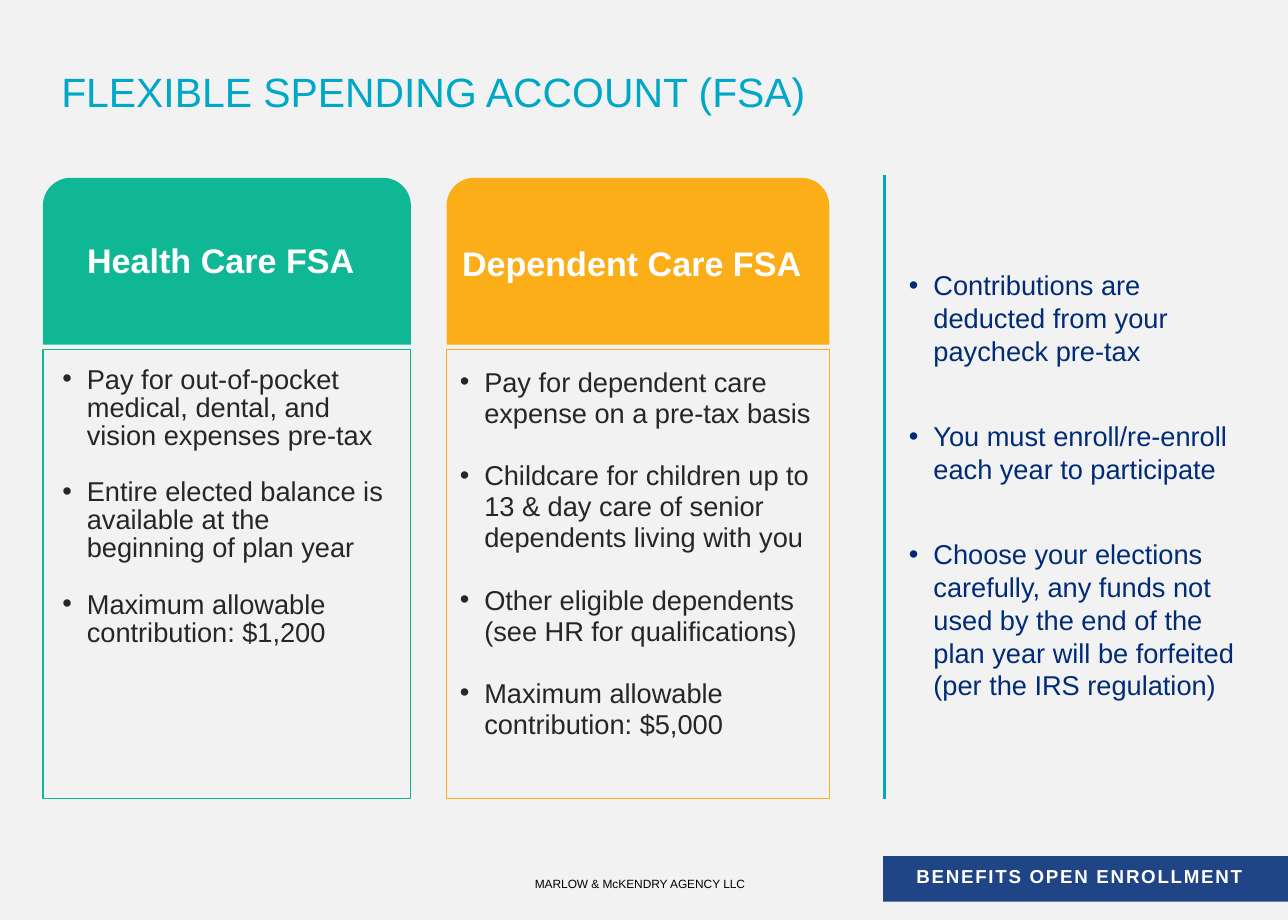
from lxml.etree import SubElement
from pptx import Presentation
from pptx.dml.color import RGBColor
from pptx.enum.shapes import MSO_CONNECTOR as CONNECTOR, MSO_SHAPE as SHAPE
from pptx.enum.text import MSO_ANCHOR as ANCHOR, PP_ALIGN as ALIGN
from pptx.oxml.ns import qn
from pptx.util import Inches, Pt

GREY = RGBColor(0xF2, 0xF2, 0xF2)
BLACK = RGBColor(0x00, 0x00, 0x00)
CHARCOAL = RGBColor(0x26, 0x26, 0x26)
WHITE = RGBColor(0xFF, 0xFF, 0xFF)
NAVY = RGBColor(0x00, 0x2C, 0x77)
CYAN = RGBColor(0x00, 0xA8, 0xC8)
GREEN = RGBColor(0x0F, 0xB7, 0x95)
ORANGE = RGBColor(0xFB, 0xAE, 0x17)

CARD_TOP, HEAD_HEIGHT = 1.45, 1.36
FRAME_TOP, FRAME_HEIGHT = 2.85, 3.66
LIST_TOP = 2.94
BULLET_INDENT = 0.2
LABEL_INSETS = (0, 0, 0.1, 0.05)


class SlideBuilder:
    """Holds the text style and the current slide."""

    font = "Arial"

    def __init__(self, slide):
        self.slide = slide
        slide.background.fill.solid()
        slide.background.fill.fore_color.rgb = GREY

    def set_text(self, shape, lines, size, color, insets, bold=False, wrap=True,
                 anchor=ANCHOR.TOP, align=ALIGN.LEFT, spacing=None, gap=0):
        frame = shape.text_frame
        sides = ("margin_left", "margin_top", "margin_right", "margin_bottom")
        layout = dict(zip(sides, map(Inches, insets)))
        layout.update(word_wrap=wrap, vertical_anchor=anchor)
        for name, value in layout.items():
            setattr(frame, name, value)
        for index, line in enumerate(lines):
            paragraph = frame.paragraphs[0] if index == 0 else frame.add_paragraph()
            paragraph.text = line
            paragraph.alignment = align
            paragraph.space_before = Pt(gap if index else 0)
            if spacing:
                paragraph.line_spacing = Pt(spacing)
            font = paragraph.runs[0].font
            for name, value in dict(name=self.font, size=Pt(size), bold=bold).items():
                setattr(font, name, value)
            font.color.rgb = color
        return frame

    def text(self, box, line, size, color, insets, **style):
        shape = self.slide.shapes.add_textbox(*map(Inches, box))
        self.set_text(shape, [line], size, color, insets, **style)

    def bullets(self, box, items, color, insets, spacing, gap):
        shape = self.slide.shapes.add_textbox(*map(Inches, box))
        frame = self.set_text(shape, items, 16, color, insets, spacing=spacing, gap=gap)
        indent = Inches(BULLET_INDENT)
        for paragraph in frame.paragraphs:
            props = paragraph._p.get_or_add_pPr()
            props.set("marL", str(indent))
            props.set("indent", str(-indent))
            SubElement(props, qn("a:buFont")).set("typeface", self.font)
            SubElement(props, qn("a:buChar")).set("char", "•")

    def shape(self, kind, box, fill=None, line=None):
        shape = self.slide.shapes.add_shape(kind, *map(Inches, box))
        shape.shadow.inherit = False
        if fill is None:
            shape.fill.background()
        else:
            shape.fill.solid()
            shape.fill.fore_color.rgb = fill
        if line is None:
            shape.line.fill.background()
        else:
            shape.line.color.rgb = line
            shape.line.width = Pt(0.75)
        return shape

    def label(self, kind, box, line, size, fill, insets=LABEL_INSETS, **style):
        shape = self.shape(kind, box, fill=fill)
        self.set_text(shape, [line], size, WHITE, insets, bold=True,
                      anchor=ANCHOR.MIDDLE, align=ALIGN.CENTER, **style)
        return shape

    def divider(self, x, top, bottom, color):
        rule = self.slide.shapes.add_connector(
            CONNECTOR.STRAIGHT, *map(Inches, (x, top, x, bottom)))
        rule.line.color.rgb = color
        rule.line.width = Pt(1.5)
        SubElement(rule._element.spPr, qn("a:effectLst"))

    def card(self, left, width, color, heading, head_inset, items, list_box, spacing):
        self.label(SHAPE.ROUND_2_SAME_RECTANGLE, (left, CARD_TOP, width, HEAD_HEIGHT),
                   heading, 20, color, insets=(0, head_inset, 0.1, 0.05), spacing=20.6)
        self.shape(SHAPE.RECTANGLE, (left, FRAME_TOP, width, FRAME_HEIGHT), line=color)
        list_left, list_width, list_height = list_box
        self.bullets((list_left, LIST_TOP, list_width, list_height), items, CHARCOAL,
                     (0.1, 0.05, 0.1, 0.05), spacing, gap=spacing)


def main():
    deck = Presentation()
    deck.slide_width, deck.slide_height = Inches(10.5), Inches(7.5)
    page = SlideBuilder(deck.slides.add_slide(deck.slide_layouts[6]))

    # Footer and badge
    page.text((4.36, 7.15, 1.78, 0.11), "MARLOW & McKENDRY AGENCY LLC", 7, BLACK,
              (0, 0, 0, 0), wrap=False, anchor=ANCHOR.BOTTOM)
    badge = page.label(SHAPE.RECTANGLE, (7.2, 6.98, 3.3, 0.37),
                       "BENEFITS OPEN ENROLLMENT", 11, NAVY, wrap=False)
    badge_color = badge._element.spPr.find(qn("a:solidFill"))[0]
    SubElement(badge_color, qn("a:alpha")).set("val", "87000")
    badge_run = badge.text_frame.paragraphs[0].runs[0]
    badge_run.font._element.set("spc", "100")

    # Title
    page.text((0.5, 0.56, 9.5, 0.76), "FLEXIBLE SPENDING ACCOUNT (FSA)", 24, CYAN,
              (0, 0.05, 0.1, 0.05), spacing=24)

    # Account cards
    page.card(0.35, 3, GREEN, "Health Care FSA", 0, [
        "Pay for out-of-pocket medical, dental, and vision expenses pre-tax",
        "Entire elected balance is available at the beginning of plan year",
        "Maximum allowable contribution: $1,200",
    ], (0.41, 2.88, 2.42), spacing=16.5)
    page.card(3.64, 3.12, ORANGE, "Dependent Care FSA", 0.05, [
        "Pay for dependent care expense on a pre-tax basis",
        "Childcare for children up to 13 & day care of senior dependents living with you",
        "Other eligible dependents (see HR for qualifications)",
        "Maximum allowable contribution: $5,000",
    ], (3.65, 3.1, 3.17), spacing=18.25)

    # Rules for both accounts
    page.divider(7.21, 1.43, 6.51, CYAN)
    page.bullets((7.41, 2.19, 2.68, 3.57), [
        "Contributions are deducted from your paycheck pre-tax",
        "You must enroll/re-enroll each year to participate",
        "Choose your elections carefully, any funds not used by the end of the "
        "plan year will be forfeited (per the IRS regulation)",
    ], NAVY, (0, 0, 0, 0), spacing=19.2, gap=31)

    deck.save("out.pptx")


if __name__ == "__main__":
    main()
